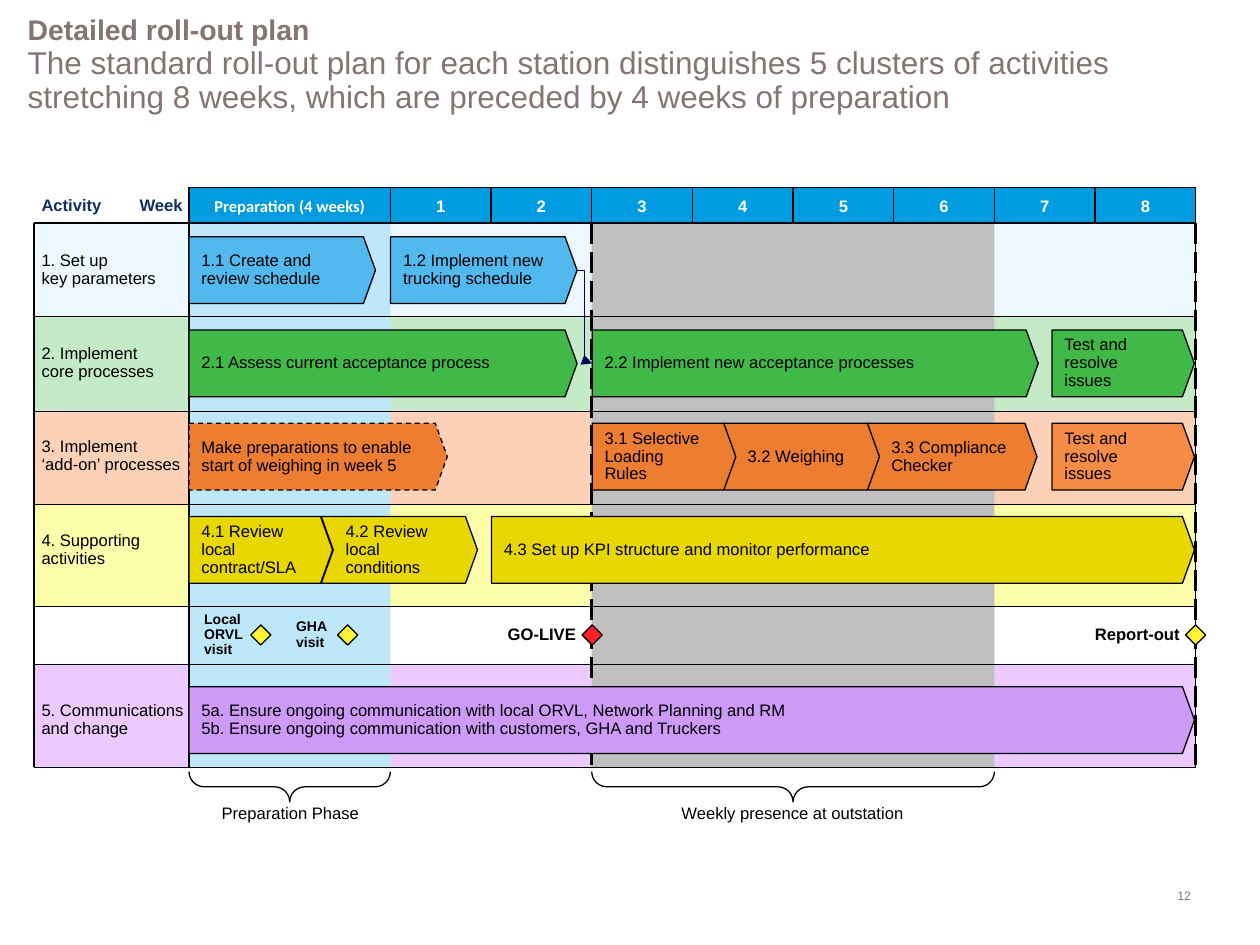
from pptx import Presentation
from pptx.dml.color import RGBColor
from pptx.enum.dml import MSO_LINE
from pptx.enum.shapes import MSO_CONNECTOR, MSO_SHAPE
from pptx.enum.text import MSO_ANCHOR, MSO_AUTO_SIZE, PP_ALIGN
from pptx.oxml.ns import qn
from pptx.util import Inches, Pt
from lxml.etree import SubElement

BLACK = RGBColor(0x00, 0x00, 0x00)
WHITE = RGBColor(0xFF, 0xFF, 0xFF)
TAUPE = RGBColor(0x84, 0x74, 0x72)
NAVY = RGBColor(0x10, 0x31, 0x5F)
LINK_BLUE = RGBColor(0x00, 0x00, 0x66)
HEADER_BLUE = RGBColor(0x00, 0x9B, 0xE1)
PREPARATION_BLUE = RGBColor(0xBE, 0xE7, 0xF9)
GREY = RGBColor(0xC0, 0xC0, 0xC0)
PALE_BLUE = RGBColor(0xEC, 0xF8, 0xFD)
PALE_GREEN = RGBColor(0xC4, 0xEA, 0xC7)
PALE_ORANGE = RGBColor(0xFB, 0xD2, 0xB7)
PALE_YELLOW = RGBColor(0xFC, 0xFE, 0xAB)
PALE_PURPLE = RGBColor(0xED, 0xCA, 0xFF)
BLUE = RGBColor(0x51, 0xB9, 0xED)
GREEN = RGBColor(0x41, 0xB9, 0x49)
ORANGE = RGBColor(0xED, 0x7D, 0x31)
LIGHT_ORANGE = RGBColor(0xF5, 0x8C, 0x45)
YELLOW = RGBColor(0xE8, 0xD7, 0x02)
PURPLE = RGBColor(0xCD, 0x9A, 0xF8)
MILESTONE_YELLOW = RGBColor(0xFF, 0xF4, 0x33)
MILESTONE_RED = RGBColor(0xFF, 0x20, 0x25)

LEFT, GRID_LEFT, RIGHT = 0.27, 1.5, 9.49
HEADER_TOP, TOP, BOTTOM = 1.49, 1.77, 6.09
WEEK = (RIGHT - GRID_LEFT) / 10
BAR_HEIGHT = 0.53
GO_LIVE = GRID_LEFT + 4 * WEEK

deck = Presentation()
deck.slide_width, deck.slide_height = Inches(10), Inches(7.5)
page = deck.slides.add_slide(deck.slide_layouts[5])


def add_box(kind, left, top, width, height, fill=None, line=None):
    box = page.shapes.add_shape(
        kind, Inches(left), Inches(top), Inches(width), Inches(height))
    box.shadow.inherit = False
    if fill is None:
        box.fill.background()
    else:
        box.fill.solid()
        box.fill.fore_color.rgb = fill
    if line is None:
        box.line.fill.background()
    else:
        box.line.color.rgb = line
        box.line.width = Pt(0.75)
    return box


def write(box, text, insets=(0, 0, 0, 0), wrap=False, align=PP_ALIGN.LEFT,
          anchor=MSO_ANCHOR.TOP, spacing=0.9, **font):
    """Fill a box with text, one paragraph for each line."""
    left, top, right, bottom = (Inches(inset) for inset in insets)
    frame = box.text_frame
    frame_format = {"margin_left": left, "margin_top": top, "margin_right": right,
                    "margin_bottom": bottom, "word_wrap": wrap,
                    "vertical_anchor": anchor}
    for name, value in frame_format.items():
        setattr(frame, name, value)
    frame.text = text
    font_format = {"name": "Arial", "size": Pt(9.5), "bold": False} | font
    color = font_format.pop("color", BLACK)
    for para in frame.paragraphs:
        para.alignment = align
        para.line_spacing = spacing
        for name, value in font_format.items():
            setattr(para.font, name, value)
        para.font.color.rgb = color


# Title and page number
title = page.shapes.title
title.left, title.top = Inches(0.12), Inches(0.13)
title.width, title.height = Inches(9.77), Inches(0.78)
title.text_frame.vertical_anchor = MSO_ANCHOR.MIDDLE
title.text_frame.word_wrap = True
title.text_frame.auto_size = MSO_AUTO_SIZE.NONE
para = title.text_frame.paragraphs[0]
para.alignment = PP_ALIGN.LEFT
para.line_spacing = 0.9
heading = para.add_run()
heading.text = "Detailed roll-out plan"
para.add_line_break()
message = para.add_run()
message.text = ("The standard roll-out plan for each station distinguishes 5 clusters of "
                "activities stretching 8 weeks, which are preceded by 4 weeks of preparation")
for span, size, bold in ((heading, 16.2, True), (message, 18, False)):
    for name, value in {"name": "Arial", "size": Pt(size), "bold": bold}.items():
        setattr(span.font, name, value)
    span.font.color.rgb = TAUPE

number = page.shapes.add_textbox(Inches(8.74), Inches(7), Inches(0.81), Inches(0.22))
write(number, "12", (0.1, 0.05, 0.1, 0.05), True, PP_ALIGN.RIGHT, spacing=1.0,
      size=Pt(7), color=TAUPE)

# Row bands: top, height, colour, top of the bars, label
rows = [
    (1.77, 0.74, PALE_BLUE, 1.88, "1. Set up\nkey parameters"),
    (2.51, 0.75, PALE_GREEN, 2.62, "2. Implement\ncore processes"),
    (3.26, 0.74, PALE_ORANGE, 3.36, "3. Implement\n‘add-on’ processes"),
    (4.0, 0.81, PALE_YELLOW, 4.1, "4. Supporting\nactivities"),
    (5.27, 0.82, PALE_PURPLE, 5.45, "5. Communications\nand change"),
]
for top, height, color, bar_top, label in rows:
    add_box(MSO_SHAPE.RECTANGLE, LEFT, top, RIGHT - LEFT, height, color)
for first_week, weeks, color in ((0, 2, PREPARATION_BLUE), (4, 4, GREY)):
    add_box(MSO_SHAPE.RECTANGLE, GRID_LEFT + first_week * WEEK, TOP, weeks * WEEK,
            BOTTOM - TOP, color)

# Header
headers = [(0, 2, "Preparation (4 weeks)", "Calibri")]
headers += [(week + 1, 1, str(week), "Arial") for week in range(1, 9)]
for start, weeks, text, font_name in headers:
    cell = add_box(MSO_SHAPE.RECTANGLE, GRID_LEFT + start * WEEK, HEADER_TOP,
                   weeks * WEEK, TOP - HEADER_TOP, HEADER_BLUE, BLACK)
    write(cell, text, align=PP_ALIGN.CENTER, anchor=MSO_ANCHOR.MIDDLE, spacing=1.0,
          name=font_name, bold=True, color=WHITE)

# Grid lines: ends, width, dash
grid_lines = [(x, TOP, x, BOTTOM, 0.75, None) for x in (LEFT, GRID_LEFT, RIGHT)]
grid_lines += [(LEFT, y, RIGHT, y, 0.25, None) for y in (2.51, 3.26, 4.0, 4.81, 5.27)]
grid_lines += [(x, TOP, x, BOTTOM, 1.5, MSO_LINE.LONG_DASH) for x in (GO_LIVE, RIGHT)]
grid_lines += [(LEFT, y, RIGHT, y, 0.75, None) for y in (TOP, BOTTOM)]
for x1, y1, x2, y2, width, dash in grid_lines:
    rule = page.shapes.add_connector(
        MSO_CONNECTOR.STRAIGHT, Inches(x1), Inches(y1), Inches(x2), Inches(y2))
    rule.line.color.rgb = BLACK
    rule.line.width = Pt(width)
    rule.line.dash_style = dash
    SubElement(rule._element.spPr, qn("a:effectLst"))

# Activity bars: row, left, width, colour, right inset, text
PLATE, CHEVRON = MSO_SHAPE.PENTAGON, MSO_SHAPE.CHEVRON
activities = [
    (PLATE, 0, 1.5, 1.48, BLUE, 0.07, "1.1 Create and review schedule"),
    (PLATE, 0, 3.1, 1.48, BLUE, 0, "1.2 Implement new trucking schedule"),
    (PLATE, 1, 1.5, 3.08, GREEN, 0, "2.1 Assess current acceptance process"),
    (PLATE, 1, 4.7, 3.54, GREEN, 0, "2.2 Implement new acceptance processes"),
    (PLATE, 1, 8.35, 1.13, GREEN, 0.16, "Test and resolve issues"),
    (PLATE, 2, 1.5, 2.05, ORANGE, 0,
     "Make preparations to enable start of weighing in week 5"),
    (CHEVRON, 2, 6.88, 1.35, ORANGE, 0, "3.3 Compliance Checker"),
    (CHEVRON, 2, 5.74, 1.24, ORANGE, 0, "3.2 Weighing"),
    (PLATE, 2, 4.7, 1.14, ORANGE, 0.17, "3.1 Selective Loading Rules"),
    (PLATE, 2, 8.35, 1.13, LIGHT_ORANGE, 0.16, "Test and resolve issues"),
    (CHEVRON, 3, 2.55, 1.24, YELLOW, 0.06, "4.2 Review local conditions"),
    (PLATE, 3, 1.5, 1.14, YELLOW, 0.05, "4.1 Review local contract/SLA"),
    (PLATE, 3, 3.9, 5.58, YELLOW, 0, "4.3 Set up KPI structure and monitor performance"),
    (PLATE, 4, 1.5, 7.98, PURPLE, 0,
     "5a. Ensure ongoing communication with local ORVL, Network Planning and RM\n"
     "5b. Ensure ongoing communication with customers, GHA and Truckers"),
]
bars = {}
for kind, row, left, width, color, right_inset, text in activities:
    bar = add_box(kind, left, rows[row][3], width, BAR_HEIGHT, color, BLACK)
    bar.adjustments[0] = 0.18
    write(bar, text, (0.1, 0.05, right_inset, 0.05), True, anchor=MSO_ANCHOR.MIDDLE)
    if text.startswith("Make"):
        bar.line.dash_style = MSO_LINE.DASH
    bars[text[:3]] = bar

# Braces below the grid
for middle, span_width in ((GRID_LEFT + WEEK, 2 * WEEK), (GRID_LEFT + 6 * WEEK, 4 * WEEK)):
    brace = add_box(MSO_SHAPE.RIGHT_BRACE, middle - 0.12, 6.245 - span_width / 2,
                    0.24, span_width, line=BLACK)
    brace.rotation = 90
    brace.adjustments[0] = brace.adjustments[1] = 0.5

# Milestones
for left, color in ((1.99, MILESTONE_YELLOW), (2.68, MILESTONE_YELLOW),
                    (4.62, MILESTONE_RED), (9.41, MILESTONE_YELLOW)):
    add_box(MSO_SHAPE.DIAMOND, left, 4.96, 0.16, 0.16, color, BLACK)

# Labels: left, top, width, height, fill, text, format
header_font = {"bold": True, "color": NAVY, "anchor": MSO_ANCHOR.BOTTOM}
visit_font = {"bold": True, "size": Pt(8)}
centred = {"align": PP_ALIGN.CENTER}
labels = [(0.33, row[3] + 0.12, 1.12, 0.28, None, row[4], {}) for row in rows]
labels += [
    (0.33, 1.57, 0.47, 0.14, None, "Activity", header_font),
    (1.11, 1.57, 0.34, 0.14, None, "Week", header_font | {"align": PP_ALIGN.RIGHT}),
    (1.62, 4.86, 0.32, 0.36, PREPARATION_BLUE, "Local\nORVL\nvisit", visit_font),
    (2.35, 4.92, 0.28, 0.24, PREPARATION_BLUE, "GHA\nvisit", visit_font),
    (4.03, 4.97, 0.54, 0.14, WHITE, "GO-LIVE", {"bold": True}),
    (8.69, 4.97, 0.67, 0.14, WHITE, "Report-out", {"bold": True}),
    (1.76, 6.39, 1.09, 0.14, WHITE, "Preparation Phase", centred),
    (5.41, 6.39, 1.76, 0.14, WHITE, "Weekly presence at outstation", centred),
]
for left, top, width, height, fill, text, text_format in labels:
    write(add_box(MSO_SHAPE.RECTANGLE, left, top, width, height, fill), text, **text_format)

# Trucking schedule leads to the new acceptance processes
link = page.shapes.add_connector(
    MSO_CONNECTOR.ELBOW, Inches(4.58), Inches(2.14), Inches(4.7), Inches(2.88))
link.begin_connect(bars["1.2"], 3)
link.end_connect(bars["2.2"], 1)
link.line.color.rgb = LINK_BLUE
link.line.width = Pt(0.75)
SubElement(link.line._get_or_add_ln(), qn("a:tailEnd"), type="triangle", w="med", len="med")
SubElement(link._element.spPr, qn("a:effectLst"))

deck.save("out.pptx")
